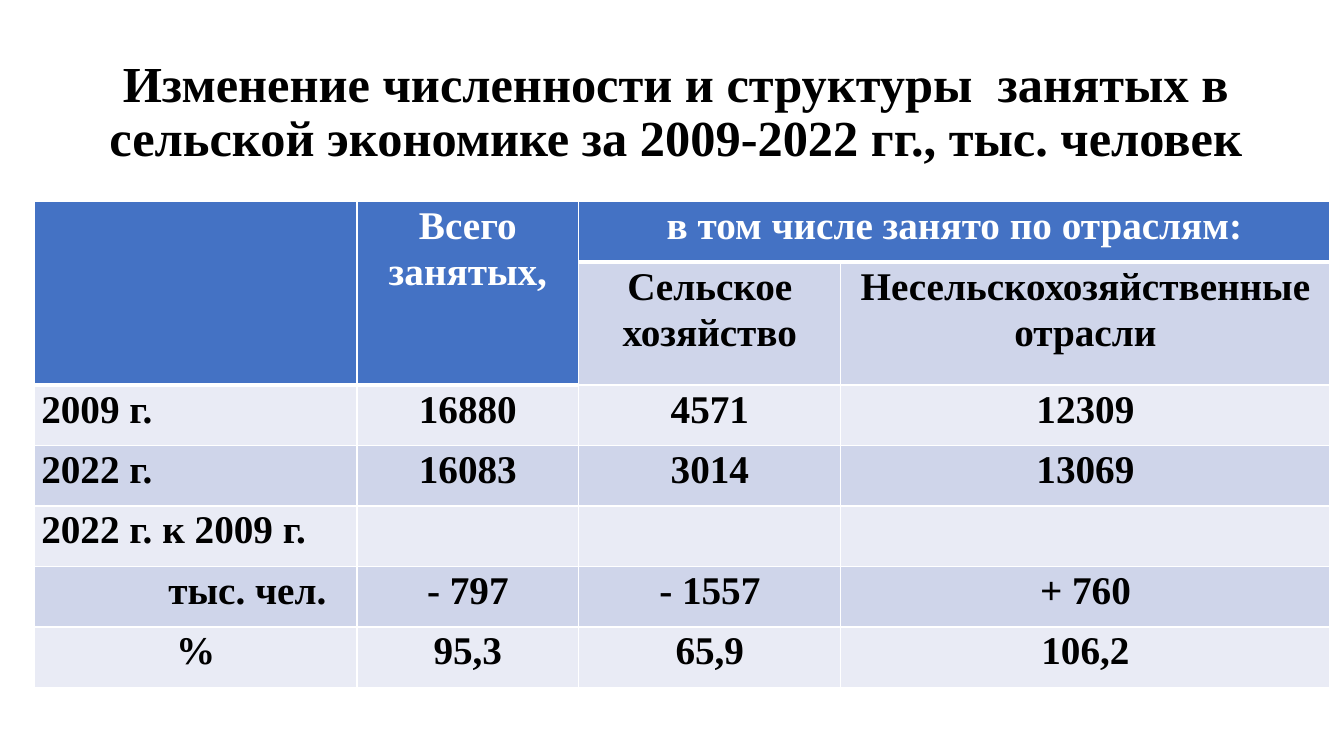
from dataclasses import dataclass

from lxml.etree import SubElement
from pptx import Presentation
from pptx.dml.color import RGBColor
from pptx.enum.text import MSO_ANCHOR, PP_ALIGN
from pptx.oxml.ns import qn
from pptx.util import Inches, Pt


@dataclass(frozen=True)
class Theme:
    """Colours, font and type sizes of the slide."""
    font: str = "Times New Roman"
    title_size: int = 36
    table_size: int = 28
    black: str = "000000"
    white: str = "FFFFFF"
    header: str = "4472C4"
    bands: tuple = ("E9EBF5", "CFD5EA")
    thin: int = 1
    thick: int = 3


class SlideBuilder:
    """Adds styled elements to the current slide."""

    def __init__(self, s, theme):
        self.s, self.theme = s, theme

    def apply(self, obj, values):
        """Set every attribute in a dict of format values."""
        for name, value in values.items():
            setattr(obj, name, value)

    def add_text(self, p, text, size, color, **paragraph):
        """Add one bold run to a formatted paragraph."""
        self.apply(p, paragraph)
        r = p.add_run()
        r.text = text
        self.apply(r.font, {"name": self.theme.font, "size": Pt(size), "bold": True})
        r.font.color.rgb = RGBColor.from_string(color)

    def title(self, text, left, top, width, height):
        """Add the centred slide title."""
        sp = self.s.shapes.add_textbox(*map(Inches, (left, top, width, height)))
        tf = sp.text_frame
        self.apply(tf, {"word_wrap": True, "vertical_anchor": MSO_ANCHOR.MIDDLE})
        self.add_text(tf.paragraphs[0], text, self.theme.title_size, self.theme.black,
                      alignment=PP_ALIGN.CENTER, line_spacing=0.9)

    def borders(self, cell, **widths):
        """Draw white cell borders, given the width of each side."""
        tcPr = cell._tc.get_or_add_tcPr()
        for side in "LRTB":
            ln = SubElement(tcPr, qn(f"a:ln{side}"), w=str(Pt(widths.get(side, self.theme.thin))))
            fill = SubElement(ln, qn("a:solidFill"))
            SubElement(fill, qn("a:srgbClr"), val=self.theme.white)

    def cell(self, cell, text, fill, color, align, indent=0.0):
        """Fill a table cell and add its text."""
        self.apply(cell, {"margin_left": Inches(0.07 + indent), "margin_right": Inches(0.07),
                          "margin_top": 0, "margin_bottom": 0})
        cell.fill.solid()
        cell.fill.fore_color.rgb = RGBColor.from_string(fill)
        if text:
            self.add_text(cell.text_frame.paragraphs[0], text, self.theme.table_size, color,
                          alignment=align, line_spacing=1.07, space_after=Pt(8))

    def table(self, rows, widths, heights, left, top, merges, labels):
        """Add a banded table whose header cells may be merged."""
        t = self.theme
        box = map(Inches, (left, top, sum(widths), sum(heights)))
        table = self.s.shapes.add_table(len(rows), len(widths), *box).table
        for column, width in zip(table.columns, widths):
            column.width = Inches(width)
        for row, height in zip(table.rows, heights):
            row.height = Inches(height)
        header = {(0, c) for c in range(len(widths))}
        for (r1, c1), (r2, c2) in merges:
            table.cell(r1, c1).merge(table.cell(r2, c2))
            header |= {(r, c) for r in range(r1, r2 + 1) for c in range(c1, c2 + 1)}
        for r, row in enumerate(rows):
            for c, text in enumerate(row):
                cell, is_header = table.cell(r, c), (r, c) in header
                below_header = (r - 1, c) in header and not is_header
                self.borders(cell, T=t.thick if below_header else t.thin,
                             B=t.thick if is_header else t.thin)
                align, indent = labels.get((r, c), (PP_ALIGN.CENTER, 0))
                self.cell(cell, text, t.header if is_header else t.bands[r % 2],
                          t.white if is_header else t.black, align, indent)


def main():
    """Build and save the slide."""
    prs = Presentation()
    prs.slide_width, prs.slide_height = Inches(13.33), Inches(7.5)
    builder = SlideBuilder(prs.slides.add_slide(prs.slide_layouts[6]), Theme())
    builder.title("Изменение численности и структуры  занятых в сельской экономике "
                  "за 2009-2022 гг., тыс. человек", 0.34, 0.4, 12.73, 1.45)
    rows = [
        ("", "Всего занятых,", "в том числе занято по отраслям:", ""),
        ("", "", "Сельское хозяйство", "Несельскохозяйственные отрасли"),
        ("2009 г.", "16880", "4571", "12309"),
        ("2022 г.", "16083", "3014", "13069"),
        ("2022 г. к 2009 г.", "", "", ""),
        ("тыс. чел.", "- 797", "- 1557", "+ 760"),
        ("%", "95,3", "65,9", "106,2"),
    ]
    labels = {(r, 0): (PP_ALIGN.LEFT, 0) for r in (2, 3, 4)}
    labels[5, 0] = (PP_ALIGN.LEFT, 1.26)
    builder.table(rows, widths=(3.2, 2.2, 2.6, 4.85), heights=(0.6, 1.22) + (0.6,) * 5,
                  left=0.34, top=2, labels=labels,
                  merges=[((0, 0), (1, 0)), ((0, 1), (1, 1)), ((0, 2), (0, 3))])
    prs.save("out.pptx")


if __name__ == "__main__":
    main()
